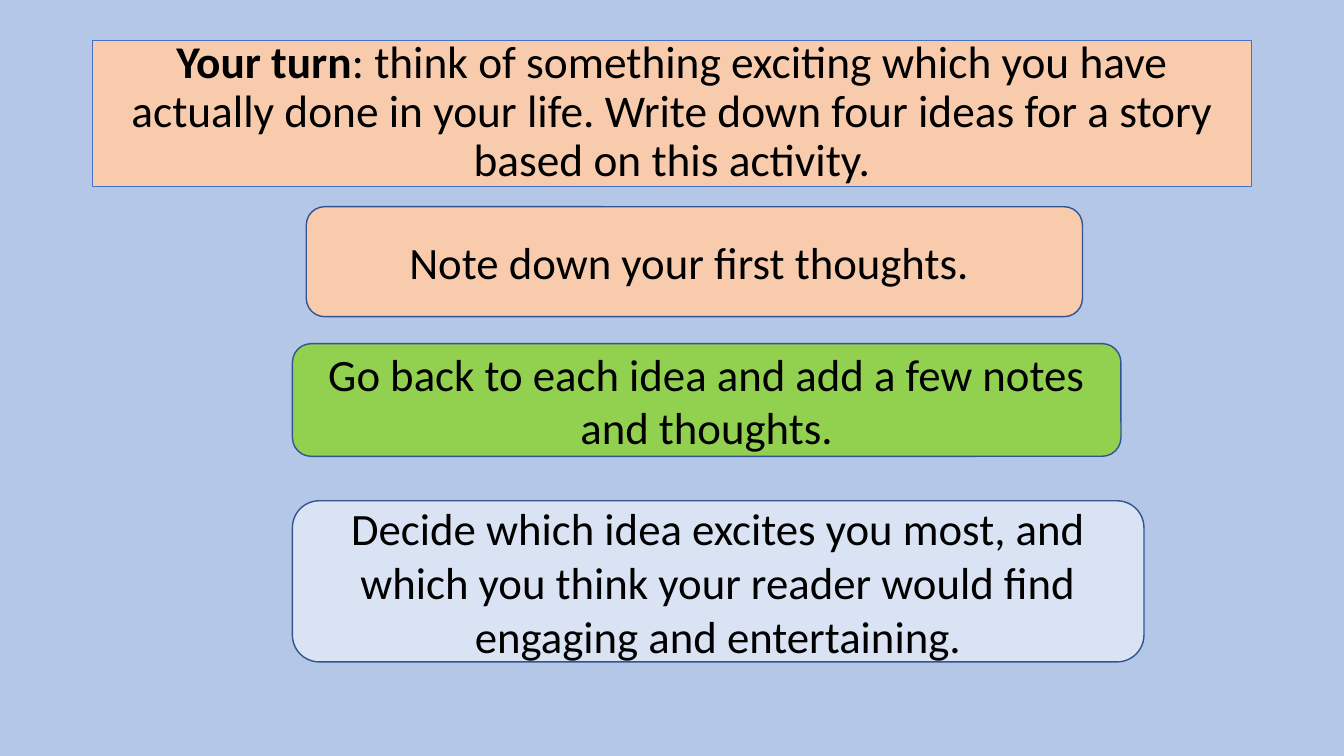
from pptx import Presentation
from pptx import util as u
from pptx.dml.color import RGBColor
from pptx.enum import shapes, text

BLACK = RGBColor(0x00, 0x00, 0x00)
SKY = RGBColor(0xB4, 0xC7, 0xE7)
PEACH = RGBColor(0xF8, 0xCB, 0xAD)
GREEN = RGBColor(0x92, 0xD0, 0x50)
PALE = RGBColor(0xDA, 0xE3, 0xF3)
BLUE = RGBColor(0x44, 0x72, 0xC4)
NAVY = RGBColor(0x32, 0x54, 0x91)

# Left, top, width and height in cm, then fill and wording
STEPS = [
    (7.72, 5.21, 19.56, 2.77, PEACH, "Note down your first thoughts. "),
    (7.37, 8.66, 20.88, 2.84, GREEN,
     "Go back to each idea and add a few notes and thoughts."),
    (7.37, 12.62, 21.46, 4.06, PALE,
     "Decide which idea excites you most, and which you think your reader "
     "would find engaging and entertaining."),
]


def paint(shape, fill, line, width):
    shape.fill.solid()
    shape.fill.fore_color.rgb = fill
    shape.line.color.rgb = line
    shape.line.width = u.Pt(width)


def style(shape, size):
    """Centre the text of a shape and set its font."""
    frame = shape.text_frame
    frame.word_wrap = True
    frame.auto_size = text.MSO_AUTO_SIZE.NONE
    frame.vertical_anchor = text.MSO_ANCHOR.MIDDLE
    for para in frame.paragraphs:
        para.alignment = text.PP_ALIGN.CENTER
        for run in para.runs:
            run.font.name = "Calibri"
            run.font.size = u.Pt(size)
            run.font.color.rgb = BLACK


def add_title(slide):
    title = slide.shapes.title
    title.left, title.top = u.Cm(2.33), u.Cm(1.01)
    title.width, title.height = u.Cm(29.21), u.Cm(3.68)
    paint(title, PEACH, BLUE, 0.75)
    para = title.text_frame.paragraphs[0]
    para.line_spacing = 0.9
    lead, task = para.add_run(), para.add_run()
    lead.text = "Your turn"
    lead.font.bold = True
    task.text = (": think of something exciting which you have actually done "
                 "in your life. Write down four ideas for a story based on "
                 "this activity.")
    style(title, 32.4)


def add_step(slide, left, top, width, height, fill, words):
    box = slide.shapes.add_shape(
        shapes.MSO_SHAPE.ROUNDED_RECTANGLE,
        u.Cm(left), u.Cm(top), u.Cm(width), u.Cm(height))
    box.shadow.inherit = False
    paint(box, fill, NAVY, 1)
    box.text_frame.text = words
    style(box, 32)


def main():
    deck = Presentation()
    deck.slide_width, deck.slide_height = u.Cm(33.87), u.Cm(19.05)
    slide = deck.slides.add_slide(deck.slide_layouts.get_by_name("Title Only"))
    slide.background.fill.solid()
    slide.background.fill.fore_color.rgb = SKY
    add_title(slide)
    for step in STEPS:
        add_step(slide, *step)
    deck.save("out.pptx")


if __name__ == "__main__":
    main()
